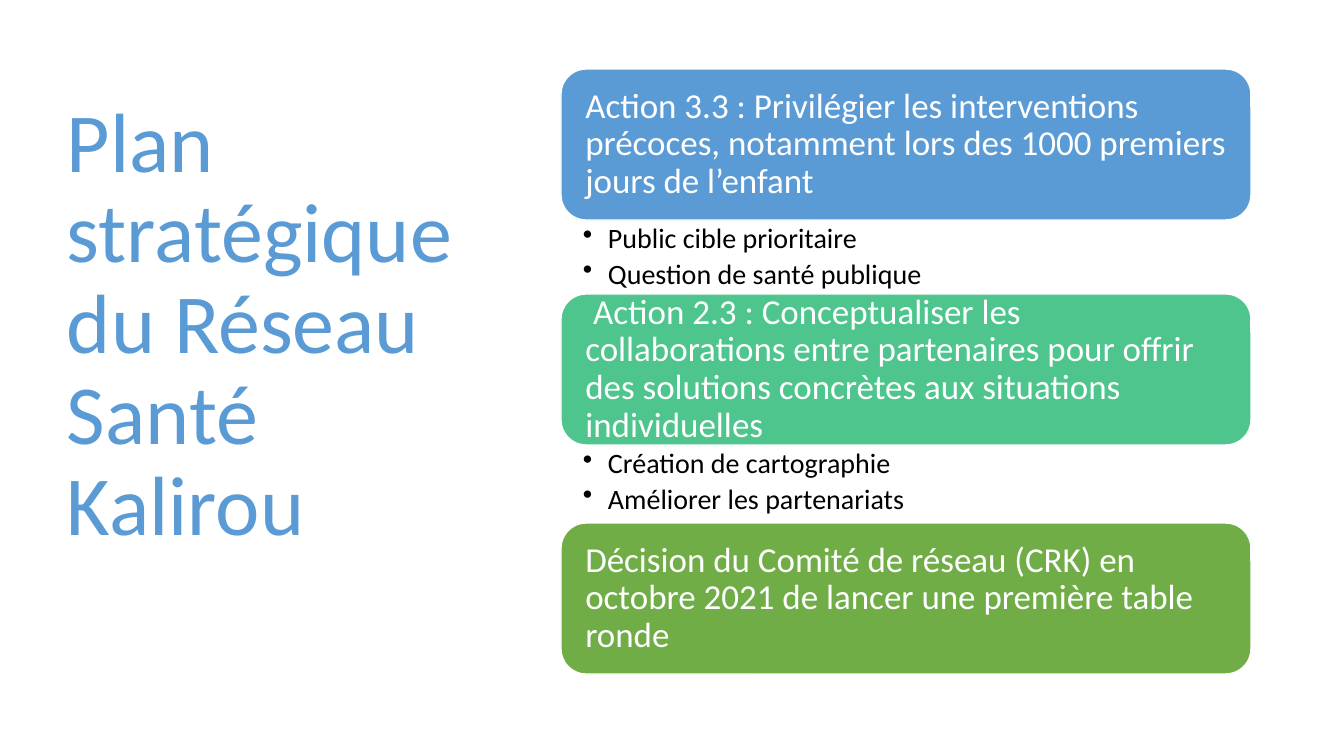
import pptx
import pptx.util
import pptx.dml.color
import pptx.enum.shapes
import pptx.enum.text
import pptx.oxml.ns
import lxml.etree

SCALE = 914400 / 100.8
ANCHOR = pptx.enum.text.MSO_ANCHOR
ROUND = pptx.enum.shapes.MSO_SHAPE.ROUNDED_RECTANGLE


def px(*nums):
    return [round(n * SCALE) for n in nums]


def style(para, size, color):
    para.font.name = "Calibri"
    para.font.size = pptx.util.Pt(size)
    para.font.color.rgb = pptx.dml.color.RGBColor.from_string(color)
    para.alignment = pptx.enum.text.PP_ALIGN.LEFT
    para.line_spacing = 0.9


deck = pptx.Presentation()
deck.slide_width, deck.slide_height = px(1344, 756)
slide = deck.slides.add_slide(deck.slide_layouts[5])

title = slide.shapes.title
title.left, title.top, title.width, title.height = px(57, 69, 419, 607)
frame = title.text_frame
frame.text = "Plan stratégique du Réseau Santé Kalirou"
frame.word_wrap = True
frame.auto_size = pptx.enum.text.MSO_AUTO_SIZE.NONE
frame.vertical_anchor = ANCHOR.MIDDLE
frame.margin_left, frame.margin_right, frame.margin_top, frame.margin_bottom = px(10, 10, 5, 97)
style(frame.paragraphs[0], 60, "5B9BD5")

cards = [
    (69, "5B9BD5",
     "Action 3.3 : Privilégier les interventions précoces, notamment lors des 1000 premiers jours de l’enfant",
     ["Public cible prioritaire", "Question de santé publique"]),
    (294, "4DC58D",
     " Action 2.3 : Conceptualiser les collaborations entre partenaires pour offrir des solutions concrètes aux situations individuelles",
     ["Création de cartographie", "Améliorer les partenariats"]),
    (523, "70AD47",
     "Décision du Comité de réseau (CRK) en octobre 2021 de lancer une première table ronde",
     []),
]
for top, color, text, points in cards:
    card = slide.shapes.add_shape(ROUND, *px(561, top, 690, 151))
    card.shadow.inherit = False
    card.fill.solid()
    card.fill.fore_color.rgb = pptx.dml.color.RGBColor.from_string(color)
    card.line.color.rgb = pptx.dml.color.RGBColor.from_string("FFFFFF")
    card.line.width = pptx.util.Pt(1)
    frame = card.text_frame
    frame.word_wrap = True
    frame.vertical_anchor = ANCHOR.MIDDLE
    frame.margin_left, frame.margin_right, frame.margin_top, frame.margin_bottom = px(17, 17, 17, 17)
    frame.text = text
    style(frame.paragraphs[0], 25, "FFFFFF")

    if points:
        box = slide.shapes.add_textbox(*px(561, top + 152, 690, 75))
        frame = box.text_frame
        frame.word_wrap = True
        frame.margin_left, frame.margin_right, frame.margin_top, frame.margin_bottom = px(22, 19, 3, 3)
        frame.text = "\n".join(points)
        for para in frame.paragraphs:
            style(para, 20, "000000")
            para.space_after = pptx.util.Pt(4)
            props = para._p.get_or_add_pPr()
            indent = px(25)[0]
            props.set("marL", str(indent))
            props.set("indent", str(-indent))
            mark = lxml.etree.Element(pptx.oxml.ns.qn("a:buChar"), char="•")
            props.find(pptx.oxml.ns.qn("a:spcAft")).addnext(mark)

deck.save("out.pptx")
